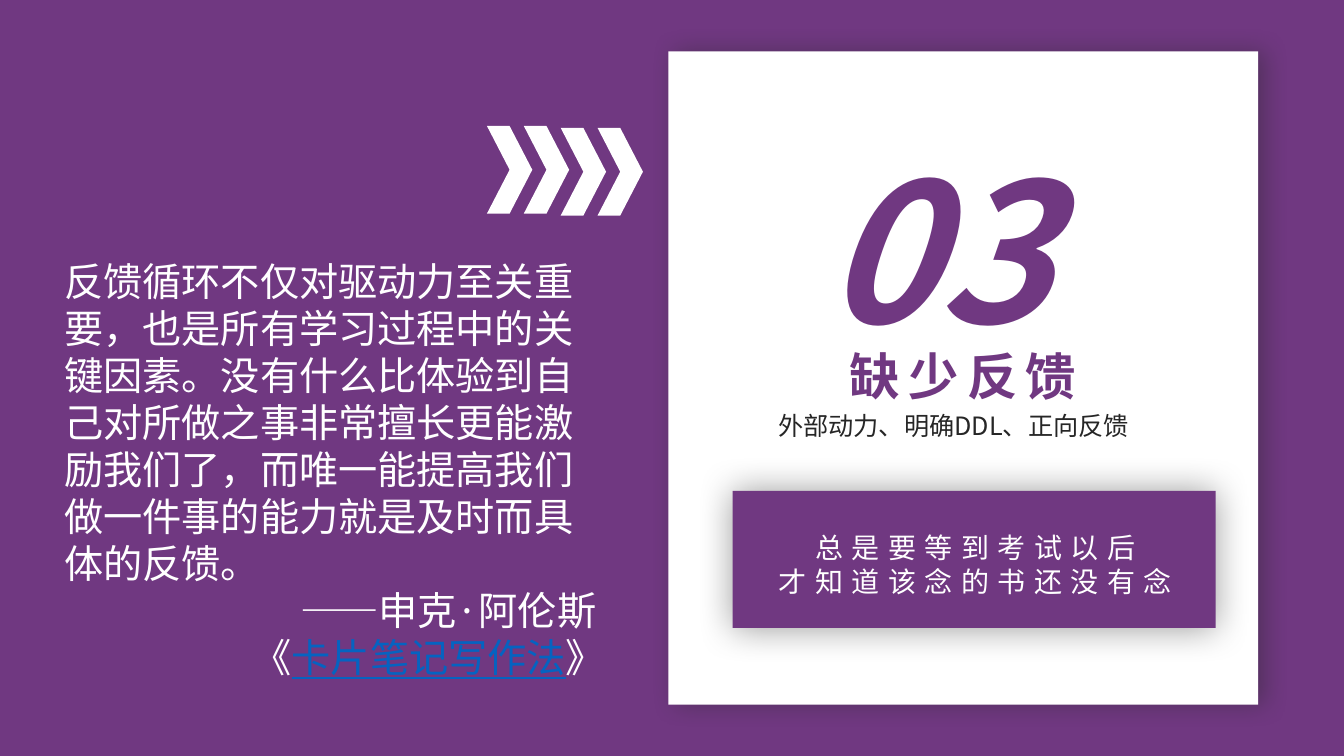
"""Build the section slide "03 缺少反馈" with a quotation and a card."""
from lxml import etree
from pptx import Presentation
from pptx.dml.color import RGBColor
from pptx.enum import shapes, text
from pptx.oxml import ns
from pptx.util import Pt

PURPLE, WHITE, DARK, BLUE = "703881", "FFFFFF", "262626", "0563C1"
SC, JP = "Noto Sans CJK SC", "Noto Sans CJK JP"
CENTER, LEFT, RIGHT = text.PP_ALIGN.CENTER, text.PP_ALIGN.LEFT, text.PP_ALIGN.RIGHT
LINE_HEIGHT = 1.2

CARD = (477.4, 36.7, 421.2, 466.6)
BANNER = (523.4, 350.6, 344.9, 97.9)
CHEVRON_SIZE = (32.4, 62.6)
CHEVRON_LEFT, CHEVRON_STEP = 347.8, 26.35
CHEVRON_TOPS = [90, 90, 91.4, 91.4]

NUMBER = [(CENTER, [("03", PURPLE)])]
TITLE = [(CENTER, [("缺少反馈", PURPLE)])]
SUBTITLE = [(CENTER, [("外部动力、明确DDL、正向反馈", DARK)])]
MOTTO = [
    (CENTER, [("总是要等到考试以后", WHITE)]),
    (CENTER, [("才知道该念的书还没有念", WHITE)]),
]
QUOTE = [
    (LEFT, [("反馈循环不仅对驱动力至关重要，也是所有学习过程中的关键因素。"
             "没有什么比体验到自己对所做之事非常擅长更能激励我们了，"
             "而唯一能提高我们做一件事的能力就是及时而具体的反馈。", WHITE)]),
    (RIGHT, [("——申克·阿伦斯 ", WHITE)]),
    (RIGHT, [("《", WHITE), ("卡片笔记写作法", BLUE), ("》", WHITE)]),
]


def rgb(color):
    return RGBColor.from_string(color)


def add_block(parent, kind, box, color):
    sp = parent.add_shape(kind, *map(Pt, box))
    sp.shadow.inherit = False
    sp.fill.solid()
    sp.fill.fore_color.rgb = rgb(color)
    sp.line.fill.background()
    return sp


def add_shadow(sp, color, blur, dist):
    effects = sp.element.spPr.find(ns.qn("a:effectLst"))
    shadow = etree.SubElement(effects, ns.qn("a:outerShdw"), blurRad=str(Pt(blur)),
                              dist=str(Pt(dist)), dir="0", algn="ctr", rotWithShape="0")
    tint = etree.SubElement(shadow, ns.qn("a:srgbClr"), val=color)
    etree.SubElement(tint, ns.qn("a:alpha"), val="40000")


def write(sp, paragraphs, size, font=SC, bold=False, italic=False, spacing=0):
    tf = sp.text_frame
    tf.word_wrap = True
    tf.auto_size = text.MSO_AUTO_SIZE.NONE
    tf.vertical_anchor = text.MSO_ANCHOR.TOP
    for i, (align, runs) in enumerate(paragraphs):
        p = tf.add_paragraph() if i else tf.paragraphs[0]
        p.alignment = align
        p.line_spacing = Pt(size * LINE_HEIGHT)
        for content, color in runs:
            r = p.add_run()
            r.text = content
            r.font.size = Pt(size)
            r.font.name = font
            r.font.bold = bold
            r.font.italic = italic
            r.font.underline = color == BLUE
            r.font.color.rgb = rgb(color)
            rPr = r.font._element
            rPr.set("lang", "zh-CN")
            rPr.set("spc", str(spacing * 100))
            latin = rPr.find(ns.qn("a:latin"))
            latin.addnext(etree.Element(ns.qn("a:ea"), typeface=font))


def add_text(parent, box, paragraphs, size, **style):
    write(parent.add_textbox(*map(Pt, box)), paragraphs, size, **style)


def main():
    prs = Presentation()
    prs.slide_width, prs.slide_height = Pt(960), Pt(540)
    s = prs.slides.add_slide(prs.slide_layouts[5])
    s.background.fill.solid()
    s.background.fill.fore_color.rgb = rgb(PURPLE)

    card = add_block(s.shapes, shapes.MSO_SHAPE.RECTANGLE, CARD, WHITE)
    add_shadow(card, DARK, 18, 5)

    chevrons = s.shapes.add_group_shape().shapes
    for i, top in enumerate(CHEVRON_TOPS):
        box = (CHEVRON_LEFT + i * CHEVRON_STEP, top, *CHEVRON_SIZE)
        add_block(chevrons, shapes.MSO_SHAPE.CHEVRON, box, WHITE)

    add_text(s.shapes, (523.4, 89.5, 290.9, 174.2), NUMBER, 138, bold=True, italic=True)

    title = s.shapes.title
    title.left, title.top, title.width, title.height = map(Pt, (515.5, 242.9, 344.9, 51.1))
    write(title, TITLE, 36, bold=True, spacing=6)
    card.element.getparent().append(title.element)

    banner = s.shapes.add_group_shape().shapes
    panel = add_block(banner, shapes.MSO_SHAPE.RECTANGLE, BANNER, PURPLE)
    add_shadow(panel, "000000", 26, 0)
    add_text(banner, (540, 375.4, 313.2, 55.4), MOTTO, 20, spacing=6)

    add_text(s.shapes, (535.7, 289.5, 290.9, 28.8), SUBTITLE, 18)
    add_text(s.shapes, (38.9, 180, 400.3, 312.5), QUOTE, 28, font=JP)
    prs.save("out.pptx")


if __name__ == "__main__":
    main()
